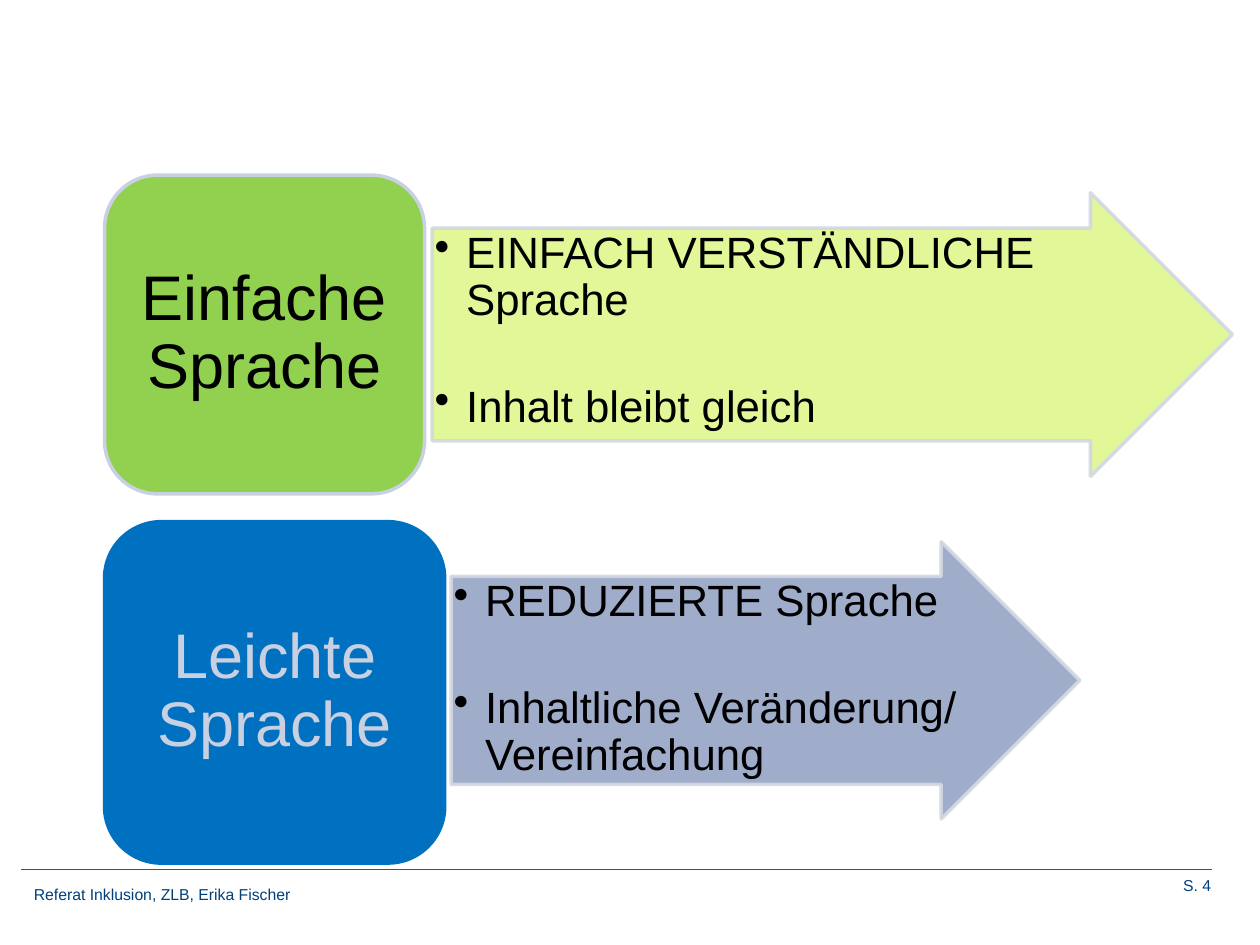
from lxml import etree
from pptx import Presentation
from pptx import util as u
from pptx.dml.color import RGBColor
from pptx.enum import shapes, text
from pptx.oxml.ns import qn

theme = {
    "font": "Arial", "small": 9, "body": 25, "head": 36,
    "foot": "00407A", "rule": "2C5884", "black": "000000",
    "pale": "C8D0E2", "edge": "D2D8E2",
    "green": "92D050", "lime": "DFF78C", "blue": "0070C0", "slate": "95A3C5",
}

deck = Presentation()
deck.slide_width, deck.slide_height = u.Inches(10), u.Inches(7.5)
slide = deck.slides.add_slide(deck.slide_layouts[6])


def write(lines, at, size, color="black", align=text.PP_ALIGN.LEFT,
          anchor=text.MSO_ANCHOR.TOP, inset=(0.1, 0.05), space=1, gap=0, bullet=False):
    frame = slide.shapes.add_textbox(*map(u.Inches, at)).text_frame
    frame.word_wrap = True
    frame.vertical_anchor = anchor
    frame.margin_left = frame.margin_right = u.Inches(inset[0])
    frame.margin_top = frame.margin_bottom = u.Inches(inset[1])
    for i, line in enumerate(lines):
        para = frame.paragraphs[0] if i == 0 else frame.add_paragraph()
        para.alignment = align
        para.line_spacing = space
        if i:
            para.space_before = u.Pt(gap)
        if bullet:
            props = para._p.get_or_add_pPr()
            props.set("marL", str(u.Inches(0.25)))
            props.set("indent", str(-u.Inches(0.25)))
            etree.SubElement(props, qn("a:buChar"), char="•")
        run = para.add_run()
        run.text = line
        run.font.name = theme["font"]
        run.font.size = u.Pt(theme[size])
        run.font.color.rgb = RGBColor.from_string(theme[color])


def draw(kind, at, fill, edge, alpha=100):
    shape = slide.shapes.add_shape(kind, *map(u.Inches, at))
    shape.shadow.inherit = False
    shape.fill.solid()
    shape.fill.fore_color.rgb = RGBColor.from_string(theme[fill])
    shape.line.color.rgb = RGBColor.from_string(theme[edge])
    shape.line.width = u.Pt(2)
    if alpha < 100:
        for tone in shape._element.spPr.iter(qn("a:srgbClr")):
            etree.SubElement(tone, qn("a:alpha"), val=str(alpha * 1000))
    return shape


write(["Referat Inklusion, ZLB, Erika Fischer"], (0.17, 6.97, 7.35, 0.25), "small", "foot")
write(["S. 4"], (8.54, 6.9, 1.17, 0.33), "small", "foot", align=text.PP_ALIGN.RIGHT)

rule = slide.shapes.add_connector(
    shapes.MSO_CONNECTOR.STRAIGHT, *map(u.Inches, (0.17, 6.9, 9.62, 6.9)))
rule.line.color.rgb = RGBColor.from_string(theme["rule"])
rule.line.width = u.Pt(0.75)
etree.SubElement(rule._element.spPr, qn("a:effectLst"))

rows = [
    ("Einfache Sprache", "black", (0.83, 1.39, 2.54, 2.53), "green", "pale",
     ["EINFACH VERSTÄNDLICHE Sprache", "Inhalt bleibt gleich"],
     (3.43, 1.53, 6.35, 2.25), "lime"),
    ("Leichte Sprache", "pale", (0.83, 4.14, 2.7, 2.71), "blue", "blue",
     ["REDUZIERTE Sprache", "Inhaltliche Veränderung/ Vereinfachung"],
     (3.58, 4.3, 4.99, 2.2), "slate"),
]
for head, ink, box, fill, edge, points, span, tint in rows:
    arrow = draw(shapes.MSO_SHAPE.RIGHT_ARROW, span, tint, "edge", alpha=90)
    arrow.adjustments[0], arrow.adjustments[1] = 0.75, 0.5
    left, top, wide, high = span
    write(points, (left, top + high / 8, wide - high * 3 / 8, high * 3 / 4), "body",
          inset=(0.02, 0.02), space=0.9, gap=34, bullet=True)

    draw(shapes.MSO_SHAPE.ROUNDED_RECTANGLE, box, fill, edge)
    left, top, wide, high = box
    pad = wide * 0.05
    write([head], (left + pad, top + pad, wide - 2 * pad, high - 2 * pad), "head", ink,
          align=text.PP_ALIGN.CENTER, anchor=text.MSO_ANCHOR.MIDDLE,
          inset=(0.15, 0.07), space=0.9)

deck.save("out.pptx")
